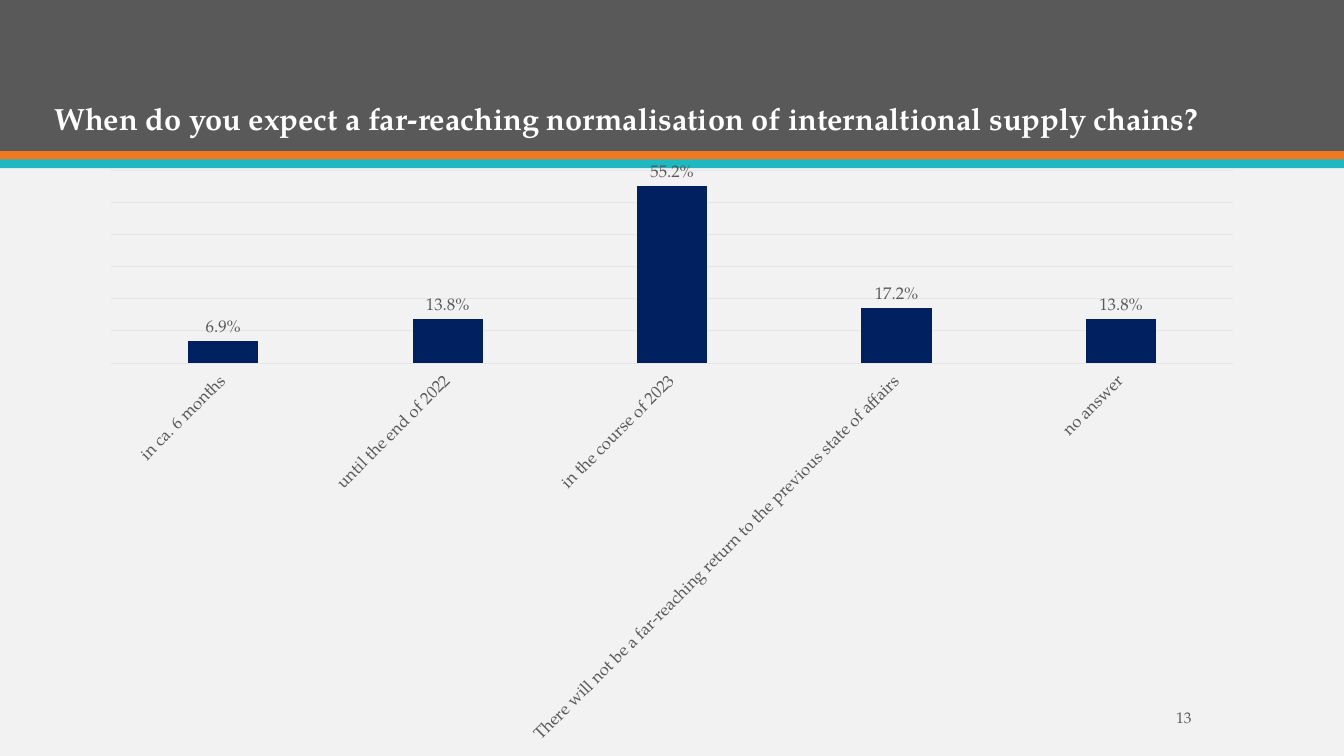
from pptx import Presentation
from pptx.chart.data import CategoryChartData
from pptx.dml.color import RGBColor
from pptx.enum.chart import XL_CHART_TYPE as ChartType
from pptx.enum.chart import XL_LABEL_POSITION as LabelPosition
from pptx.enum.chart import XL_TICK_LABEL_POSITION as TickLabelPosition
from pptx.enum.chart import XL_TICK_MARK as TickMark
from pptx.enum.shapes import MSO_SHAPE as Preset
from pptx.enum.text import MSO_ANCHOR as Anchor
from pptx.enum.text import PP_ALIGN as Align
from pptx.util import Cm, Pt

WIDTH, HEIGHT = 33.87, 19.05
EXPECTATIONS = {
    "in ca. 6 months": 6.9,
    "until the end of 2022": 13.8,
    "in the course of 2023": 55.2,
    "There will not be a far-reaching return to the previous state of affairs": 17.2,
    "no answer": 13.8,
}


def color(value):
    return RGBColor.from_string(value)


def style_font(font, size, ink, bold=False, name="TeX Gyre Pagella"):
    font.name = name
    font.size = Pt(size)
    font.bold = bold
    font.color.rgb = color(ink)


def write(frame, text, size=12, ink="595959", bold=False,
          align=Align.LEFT, anchor=Anchor.MIDDLE, spacing=1.0):
    frame.word_wrap = True
    frame.vertical_anchor = anchor
    paragraph = frame.paragraphs[0]
    paragraph.alignment = align
    paragraph.line_spacing = spacing
    run = paragraph.add_run()
    run.text = text
    style_font(run.font, size, ink, bold)


class SurveySlide:
    """Holds the survey style and the slide being built."""

    gray, orange, teal, navy = "595959", "EF7920", "1EB8C1", "002060"
    background, grid, white = "F2F2F2", "E6E6E6", "FFFFFF"

    def __init__(self, presentation):
        self.slide = presentation.slides.add_slide(presentation.slide_layouts[6])
        fill = self.slide.background.fill
        fill.solid()
        fill.fore_color.rgb = color(self.background)

    def band(self, top, height, fill):
        shape = self.slide.shapes.add_shape(
            Preset.RECTANGLE, 0, Cm(top), Cm(WIDTH), Cm(height))
        shape.shadow.inherit = False
        shape.fill.solid()
        shape.fill.fore_color.rgb = color(fill)
        shape.line.fill.background()

    def text(self, box, text, **style):
        shape = self.slide.shapes.add_textbox(*map(Cm, box))
        write(shape.text_frame, text, **style)

    def columns(self, box, values):
        data = CategoryChartData(number_format='0.0"%"')
        data.categories = list(values)
        data.add_series("Series 1", list(values.values()))
        chart = self.slide.shapes.add_chart(
            ChartType.COLUMN_CLUSTERED, *map(Cm, box), data).chart
        chart.has_legend = False
        chart.has_title = False
        style_font(chart.font, 10, self.gray)
        self.axes(chart)
        plot = chart.plots[0]
        plot.vary_by_categories = False
        plot.gap_width, plot.overlap = 219, -27
        fill = plot.series[0].format.fill
        fill.solid()
        fill.fore_color.rgb = color(self.navy)
        plot.has_data_labels = True
        labels = plot.data_labels
        labels.show_value = True
        labels.position = LabelPosition.OUTSIDE_END
        labels.number_format = '0.0"%"'
        labels.number_format_is_linked = False
        style_font(labels.font, 12, self.gray)

    def axes(self, chart):
        categories, scale = chart.category_axis, chart.value_axis
        categories.major_tick_mark = TickMark.NONE
        categories.tick_label_position = TickLabelPosition.LOW
        style_font(categories.tick_labels.font, 12, self.gray)
        categories.format.line.color.rgb = color(self.grid)
        categories.format.line.width = Pt(0.75)
        body = categories._element.txPr.bodyPr
        body.set("rot", "-2700000")
        body.set("vert", "horz")
        scale.visible = False
        scale.minimum_scale, scale.maximum_scale, scale.major_unit = 0, 60, 10
        scale.has_major_gridlines = True
        line = scale.major_gridlines.format.line
        line.color.rgb = color(self.grid)
        line.width = Pt(0.75)


def main():
    presentation = Presentation()
    presentation.slide_width, presentation.slide_height = Cm(WIDTH), Cm(HEIGHT)
    survey = SurveySlide(presentation)
    survey.band(0, 3.81, survey.gray)
    survey.band(3.81, 0.22, survey.orange)
    survey.band(4.02, 0.22, survey.teal)
    survey.text(
        (1.12, 0.71, 32.13, 2.87),
        "When do you expect a far-reaching normalisation of internaltional supply chains?",
        size=22, ink=survey.white, bold=True, anchor=Anchor.BOTTOM, spacing=0.9)
    survey.columns((2.21, 3.99, 29.46, 15.06), EXPECTATIONS)
    survey.text((26.47, 17.7, 3.81, 0.76), "13", size=11, align=Align.RIGHT)
    presentation.save("out.pptx")


if __name__ == "__main__":
    main()
